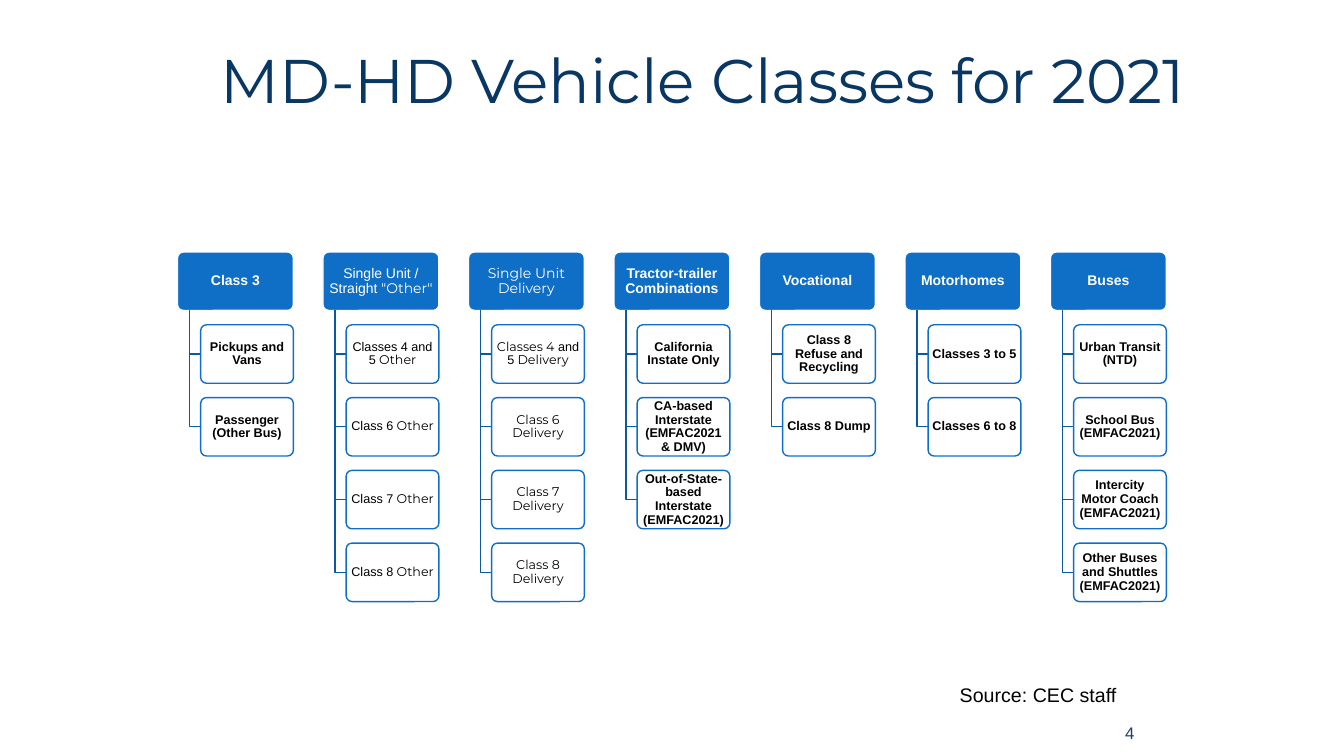
"""Build the slide of medium- and heavy-duty vehicle classes for 2021."""
from lxml import etree
from pptx import Presentation
from pptx.dml.color import RGBColor
from pptx.enum.shapes import MSO_SHAPE
from pptx.enum.text import MSO_ANCHOR, PP_ALIGN
from pptx.oxml.ns import qn
from pptx.util import Inches, Pt

CENTER, RIGHT, LEFT = PP_ALIGN.CENTER, PP_ALIGN.RIGHT, PP_ALIGN.LEFT
MIDDLE, TOP = MSO_ANCHOR.MIDDLE, MSO_ANCHOR.TOP
ROUNDED = MSO_SHAPE.ROUNDED_RECTANGLE
ARIAL, MONT = "Arial", "Montserrat"
COLORS = {"title": "083763", "number": "17406D", "blue": "0F6FC6",
          "elbow": "0C599F", "white": "FFFFFF", "black": "000000"}

COL_X, COL_STEP = 1.76, 1.443
ROW_Y, ROW_STEP = 2.5, 0.722
BOX_H, HEAD_W, ITEM_W = 0.58, 1.15, 0.92
STEM_DX, ITEM_DX = 0.12, 0.23

CLASSES = [
    ("Class 3", "Pickups and Vans", "Passenger (Other Bus)"),
    ([("Single Unit / Straight", ARIAL), (' "Other"', MONT)],
     [("Classes 4 and 5", ARIAL), (" Other", MONT)],
     *([(f"Class {n}", ARIAL), (" Other", MONT)] for n in (6, 7, 8))),
    ([("Single Unit Delivery", MONT)],
     [("Classes 4", MONT), (" and 5", ARIAL), (" Delivery", MONT)],
     *([(f"Class {n} Delivery", MONT)] for n in (6, 7, 8))),
    ("Tractor-trailer Combinations", "California Instate Only",
     "CA-based Interstate (EMFAC2021 & DMV)",
     "Out-of-State-based Interstate (EMFAC2021)"),
    ("Vocational", "Class 8 Refuse and Recycling", "Class 8 Dump"),
    ("Motorhomes", "Classes 3 to 5", "Classes 6 to 8"),
    ("Buses", "Urban Transit (NTD)", "School Bus (EMFAC2021)",
     "Intercity Motor Coach (EMFAC2021)",
     "Other Buses and Shuttles (EMFAC2021)"),
]


def write(sp, runs, size, color, align=CENTER, anchor=MIDDLE, bold=False):
    """Fill a shape with one paragraph made of (text, font) runs."""
    tf = sp.text_frame
    tf.word_wrap = True
    tf.vertical_anchor = anchor
    p = tf.paragraphs[0]
    p.alignment = align
    p.font.size = Pt(size)
    p.font.bold = bold
    p.font.color.rgb = RGBColor.from_string(COLORS[color])
    for text, font in runs:
        r = p.add_run()
        r.text = text
        r.font.name = font
    return p


def add_box(s, x, y, w, label, size, fill, line, color):
    """Add a rounded box; plain string labels are bold Arial."""
    sp = s.shapes.add_shape(ROUNDED, Inches(x), Inches(y), Inches(w), Inches(BOX_H))
    sp.adjustments[0] = 0.1
    sp.shadow.inherit = False
    sp.fill.solid()
    sp.fill.fore_color.rgb = RGBColor.from_string(COLORS[fill])
    sp.line.color.rgb = RGBColor.from_string(COLORS[line])
    sp.line.width = Pt(1)
    tf = sp.text_frame
    tf.margin_left = tf.margin_right = Inches(0.02)
    tf.margin_top = tf.margin_bottom = Inches(0.01)
    bold = isinstance(label, str)
    runs = [(label, ARIAL)] if bold else label
    write(sp, runs, size, color, bold=bold).line_spacing = 0.9
    return sp


prs = Presentation()
prs.slide_width, prs.slide_height = Inches(13.33), Inches(7.5)
s = prs.slides.add_slide(prs.slide_layouts[5])

title = s.shapes.title
title.left, title.top = Inches(1.53), Inches(0.26)
title.width, title.height = Inches(10.89), Inches(1.14)
write(title, [("MD-HD Vehicle Classes for 2021", MONT)], 44, "title").line_spacing = 0.9

number = s.shapes.add_textbox(Inches(9.42), Inches(7.07), Inches(1.93), Inches(0.4))
write(number, [("4", ARIAL)], 12, "number", RIGHT)
source = s.shapes.add_textbox(Inches(9.42), Inches(6.73), Inches(3), Inches(0.34))
write(source, [("Source: CEC staff", ARIAL)], 14, "black", LEFT, TOP)

for col, (head, *items) in enumerate(CLASSES):
    x = COL_X + col * COL_STEP
    add_box(s, x, ROW_Y, HEAD_W, head, 10, "blue", "white", "white")
    for row, item in enumerate(items, 1):
        y = ROW_Y + row * ROW_STEP
        stem_x, item_x, mid_y = x + STEM_DX, x + ITEM_DX, y + BOX_H / 2
        path = s.shapes.build_freeform(Inches(stem_x), Inches(ROW_Y + BOX_H))
        path.add_line_segments([(Inches(stem_x), Inches(mid_y)),
                                (Inches(item_x), Inches(mid_y))], close=False)
        elbow = path.convert_to_shape()
        elbow.shadow.inherit = False
        elbow.fill.background()
        elbow.line.color.rgb = RGBColor.from_string(COLORS["elbow"])
        elbow.line.width = Pt(1)
        box = add_box(s, item_x, y, ITEM_W, item, 9, "white", "blue", "black")
        white = box.fill._xPr.find(qn("a:solidFill"))[0]
        etree.SubElement(white, qn("a:alpha"), val="90000")

prs.save("out.pptx")
